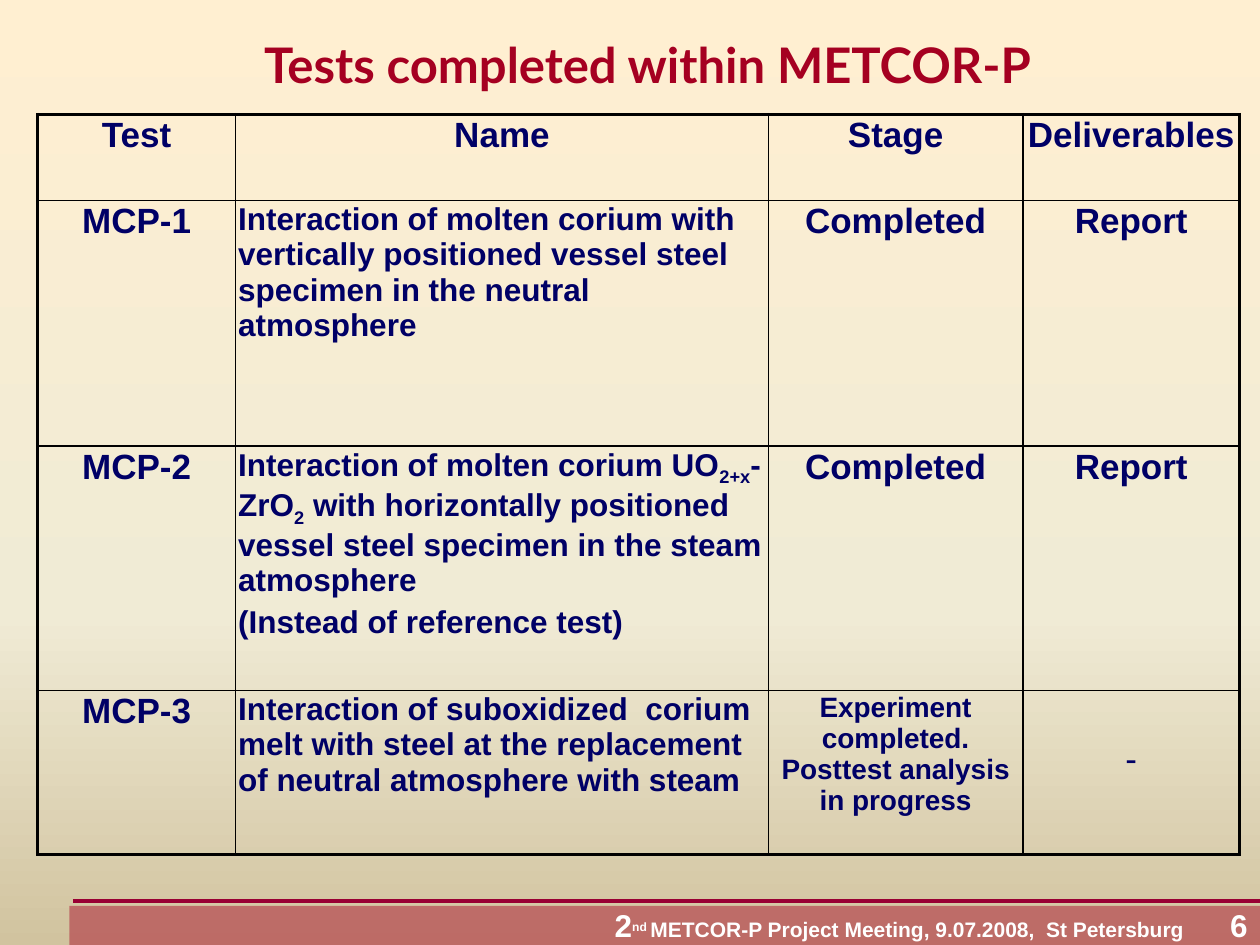
import pptx
import pptx.util
import pptx.dml.color
import pptx.enum.shapes
import pptx.enum.text
import pptx.oxml
import pptx.oxml.ns

Cm, Pt = pptx.util.Cm, pptx.util.Pt
RGB = pptx.dml.color.RGBColor.from_string
ALIGN = pptx.enum.text.PP_ALIGN
MIDDLE = pptx.enum.text.MSO_ANCHOR.MIDDLE
SHAPE = pptx.enum.shapes.MSO_SHAPE
LINE = pptx.enum.shapes.MSO_CONNECTOR.STRAIGHT
qn = pptx.oxml.ns.qn
NS = pptx.oxml.ns.nsdecls("a")

COL = {"red": "A50021", "rule": "990033", "navy": "000066",
       "white": "FFFFFF", "black": "000000"}
SKY = [(0, "FFEFD1"), (65, "F0EBD5"), (100, "D1C39F")]


def add_run(para, text, size, color, bold=True, font="Arial", base=0):
    run = para.add_run()
    run.text = text
    run.font.size = Pt(size)
    run.font.name = font
    run.font.bold = bold
    run.font.color.rgb = RGB(COL[color])
    if base:
        run.font._element.set("baseline", str(base * 1000))


def add_edge(cell, side, width):
    cell._tc.get_or_add_tcPr().append(pptx.oxml.parse_xml(
        f'<a:{side} {NS} w="{Pt(width)}"><a:solidFill>'
        f'<a:srgbClr val="{COL["black"]}"/></a:solidFill></a:{side}>'))


prs = pptx.Presentation()
prs.slide_width, prs.slide_height = Cm(25.4), Cm(19.05)
slide = prs.slides.add_slide(prs.slide_layouts[5])

# Background
fill = slide.background.fill
fill.gradient()
fill.gradient_angle = 270
stops = slide.element.find(".//" + qn("a:gsLst"))
for stop in list(stops):
    stops.remove(stop)
for pos, color in SKY:
    stops.append(pptx.oxml.parse_xml(
        f'<a:gs {NS} pos="{pos * 1000}"><a:srgbClr val="{color}"/></a:gs>'))

# Footer
rule = slide.shapes.add_connector(LINE, Cm(1.47), Cm(18.16), Cm(25.4), Cm(18.16))
rule.line.color.rgb = RGB(COL["rule"])
rule.line.width = Pt(2.25)
rule._element.spPr.append(pptx.oxml.parse_xml(f"<a:effectLst {NS}/>"))

bar = slide.shapes.add_shape(SHAPE.RECTANGLE, Cm(1.4), Cm(18.26), Cm(24), Cm(0.79))
bar.shadow.inherit = False
bar.line.fill.background()
bar.fill.solid()
bar.fill.fore_color.rgb = RGB(COL["red"])
tint = bar._element.spPr.find(qn("a:solidFill"))[0]
tint.append(pptx.oxml.parse_xml(f'<a:alpha {NS} val="45000"/>'))
page = slide.shapes.add_textbox(Cm(24), Cm(18.26), Cm(1.4), Cm(0.79))
for shape, gap in ((bar, 1.52), (page, 0.25)):
    frame = shape.text_frame
    frame.word_wrap = True
    frame.vertical_anchor = MIDDLE
    frame.margin_right = Cm(gap)
    frame.paragraphs[0].alignment = ALIGN.RIGHT
note = bar.text_frame.paragraphs[0]
add_run(note, "2", 18, "white")
add_run(note, "nd ", 12, "white", base=30)
add_run(note, "METCOR-P Project Meeting, 9.07.2008,  St Petersburg", 12, "white")
add_run(page.text_frame.paragraphs[0], "6", 18, "white")

# Title
title = slide.shapes.title
title.left, title.top, title.width, title.height = Cm(1.9), Cm(0.48), Cm(22.3), Cm(1.63)
title.text_frame.vertical_anchor = MIDDLE
head = title.text_frame.paragraphs[0]
head.alignment = ALIGN.CENTER
add_run(head, "Tests completed within METCOR-P", 28, "red", font="Lato")

# Table: a cell is a list of paragraphs, a paragraph a list of (text, baseline)
oxide = [("Interaction of molten corium UO", 0), ("2+x", -25), ("-ZrO", 0), ("2", -25),
         (" with horizontally positioned vessel steel specimen in the steam atmosphere", 0)]
rows = [
    ["Test", "Name", "Stage", "Deliverables"],
    ["МСР-1", "Interaction of molten corium with vertically positioned vessel steel "
     "specimen in the neutral atmosphere", "Completed", "Report"],
    ["МСР-2", [oxide, [("(Instead of reference test)", 0)]], "Completed", "Report"],
    ["МСР-3", "Interaction of suboxidized  corium melt with steel at the replacement "
     "of neutral atmosphere with steam",
     "Experiment completed. Posttest analysis in progress", "-"],
]
widths = [3.99, 10.74, 5.13, 4.37]
heights = [1.73, 4.95, 4.93, 3.3]
table = slide.shapes.add_table(len(rows), len(widths), Cm(0.76), Cm(2.31),
                               Cm(sum(widths)), Cm(sum(heights))).table
table.first_row = table.horz_banding = False
for col, width in zip(table.columns, widths):
    col.width = Cm(width)
for row, height in zip(table.rows, heights):
    row.height = Cm(height)

for r, row in enumerate(rows):
    for c, paras in enumerate(row):
        cell = table.cell(r, c)
        cell.margin_left = cell.margin_right = Cm(0.05)
        cell.margin_top = cell.margin_bottom = Cm(0.03)
        last = r == len(rows) - 1
        for side, outer in (("lnL", c == 0), ("lnR", c == len(widths) - 1),
                            ("lnT", r == 0), ("lnB", last)):
            add_edge(cell, side, 2.25 if outer else 1)
        cell.fill.background()
        name = r > 0 and c == 1
        size = 18 if name else 16 if last and c == 2 else 20
        if isinstance(paras, str):
            paras = [[(paras, 0)]]
        for i, runs in enumerate(paras):
            para = cell.text_frame.paragraphs[0] if i == 0 else cell.text_frame.add_paragraph()
            para.alignment = ALIGN.LEFT if name else ALIGN.CENTER
            if i:
                para.space_before = Pt(3.6)
            for text, base in runs:
                add_run(para, text, size, "navy", bold=text != "-", base=base)
table.cell(3, 3).margin_top = Cm(1)

prs.save("out.pptx")
